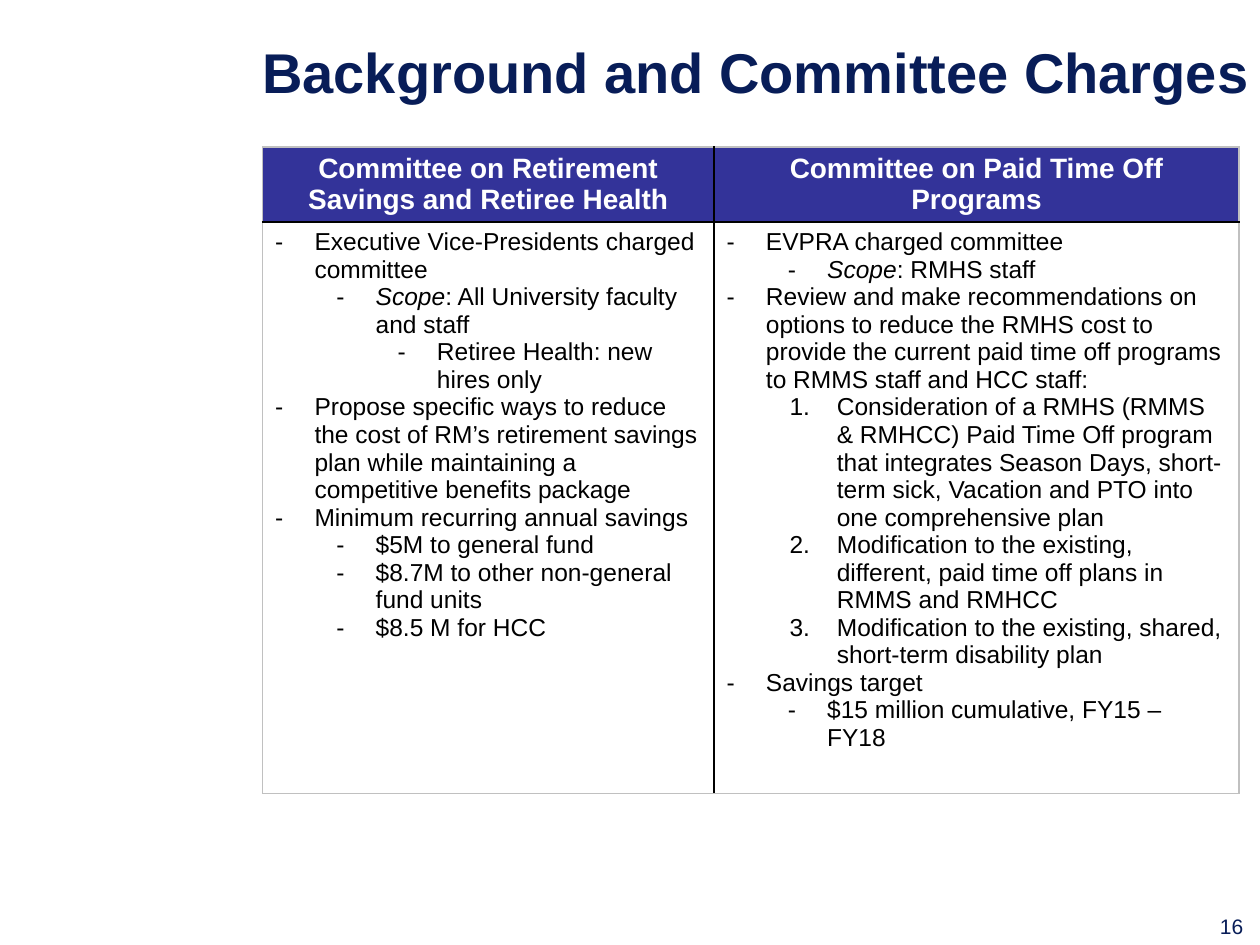
import pptx
import pptx.dml.color
import pptx.enum.text
import pptx.oxml.ns
import pptx.util
from lxml import etree

COLORS = {
    "navy": "081D58",
    "header": "333399",
    "white": "FFFFFF",
    "black": "000000",
    "edge": "C0C0C0",
}
FONT = "Arial"
INDENTS = {"dash": (22.5, 22.5), "sub": (57.5, 22.5), "subsub": (92.5, 22.5), "number": (63, 27)}
LEVELS = {"dash": 0, "sub": 1, "subsub": 2, "number": 2}

HEADINGS = [
    "Committee on Retirement Savings and Retiree Health",
    "Committee on Paid Time Off Programs",
]
RETIREMENT = [
    ("dash", "Executive Vice-Presidents charged committee"),
    ("sub", "Scope", ": All University faculty and staff"),
    ("subsub", "Retiree Health: new hires only"),
    ("dash", "Propose specific ways to reduce the cost of RM’s retirement savings plan "
             "while maintaining a competitive benefits package"),
    ("dash", "Minimum recurring annual savings"),
    ("sub", "$5M to general fund"),
    ("sub", "$8.7M to other non-general fund units"),
    ("sub", "$8.5 M for HCC"),
]
TIME_OFF = [
    ("dash", "EVPRA charged committee"),
    ("sub", "Scope", ": RMHS staff"),
    ("dash", "Review and make recommendations on options to reduce the RMHS cost to provide "
             "the current paid time off programs to RMMS staff and HCC staff:"),
    ("number", "Consideration of a RMHS (RMMS & RMHCC) Paid Time Off program that integrates "
               "Season Days, short-term sick, Vacation and PTO into one comprehensive plan"),
    ("number", "Modification to the existing, different, paid time off plans in RMMS and RMHCC"),
    ("number", "Modification to the existing, shared, short-term disability plan"),
    ("dash", "Savings target"),
    ("sub", "$15 million cumulative, FY15 – FY18"),
]


def add_span(para, text, size=14, color="black", bold=False, italic=False):
    span = para.add_run()
    span.text = text
    span.font.name = FONT
    span.font.size = pptx.util.Pt(size)
    span.font.bold = bold
    span.font.italic = italic
    span.font.color.rgb = pptx.dml.color.RGBColor.from_string(COLORS[color])


def add_child(parent, tag, **attributes):
    child = etree.SubElement(parent, pptx.oxml.ns.qn(tag))
    for name, value in attributes.items():
        child.set(name, str(value))
    return child


class SlideBuilder:
    def __init__(self, deck):
        self.page = deck.slides.add_slide(deck.slide_layouts[6])
        self.page.background.fill.solid()
        self.page.background.fill.fore_color.rgb = pptx.dml.color.RGBColor.from_string(COLORS["white"])

    def text(self, text, left, top, width, height, align=None, wrap=True, **style):
        lengths = [pptx.util.Pt(value) for value in (left, top, width, height)]
        box = self.page.shapes.add_textbox(*lengths)
        box.text_frame.word_wrap = wrap
        para = box.text_frame.paragraphs[0]
        para.alignment = align
        add_span(para, text, **style)

    def table(self, left, top, widths, heights):
        lengths = [pptx.util.Pt(value) for value in (left, top, sum(widths), sum(heights))]
        table = self.page.shapes.add_table(len(heights), len(widths), *lengths).table
        table.horz_banding = False
        for column, width in zip(table.columns, widths):
            column.width = pptx.util.Pt(width)
        for row, height in zip(table.rows, heights):
            row.height = pptx.util.Pt(height)
        return table

    def borders(self, cell, **sides):
        properties = cell._tc.get_or_add_tcPr()
        for index, side in enumerate(("L", "R", "T", "B")):
            line = etree.Element(pptx.oxml.ns.qn(f"a:ln{side}"), w=str(pptx.util.Pt(1)))
            add_child(add_child(line, "a:solidFill"), "a:srgbClr", val=COLORS[sides[side]])
            properties.insert(index, line)

    def fill(self, cell, color):
        cell.fill.solid()
        cell.fill.fore_color.rgb = pptx.dml.color.RGBColor.from_string(COLORS[color])

    def heading(self, cell, text):
        cell.margin_bottom = pptx.util.Pt(0)
        para = cell.text_frame.paragraphs[0]
        para.alignment = pptx.enum.text.PP_ALIGN.CENTER
        add_span(para, text, size=16, color="white", bold=True)

    def bullets(self, cell, items):
        for index, (kind, *parts) in enumerate(items):
            para = cell.text_frame.add_paragraph() if index else cell.text_frame.paragraphs[0]
            para.level = LEVELS[kind]
            margin, hanging = INDENTS[kind]
            properties = para._p.get_or_add_pPr()
            properties.set("marL", str(pptx.util.Pt(margin)))
            properties.set("indent", str(-pptx.util.Pt(hanging)))
            add_child(properties, "a:buFont", typeface=FONT)
            if kind == "number":
                add_child(properties, "a:buAutoNum", type="arabicPeriod")
            else:
                add_child(properties, "a:buChar", char="-")
            for position, text in enumerate(parts):
                add_span(para, text, italic=len(parts) > 1 and position == 0)


def main():
    deck = pptx.Presentation()
    deck.slide_width, deck.slide_height = pptx.util.Pt(720), pptx.util.Pt(540)
    builder = SlideBuilder(deck)
    builder.text("16", 690, 518.4, 30, 21.6, wrap=False, size=12, color="navy")
    builder.text("Background and Committee Charges", 132, 18, 600, 90,
                 align=pptx.enum.text.PP_ALIGN.CENTER, size=32, color="navy", bold=True)
    table = builder.table(150, 84, [258, 300], [43, 322])
    for column, (title, items) in enumerate(zip(HEADINGS, (RETIREMENT, TIME_OFF))):
        header, body = table.cell(0, column), table.cell(1, column)
        builder.heading(header, title)
        builder.bullets(body, items)
        builder.fill(header, "header")
        builder.fill(body, "white")
        sides = {"L": "black" if column else "edge", "R": "edge" if column else "black"}
        builder.borders(header, T="edge", B="black", **sides)
        builder.borders(body, T="black", B="edge", **sides)
    deck.save("out.pptx")


if __name__ == "__main__":
    main()
